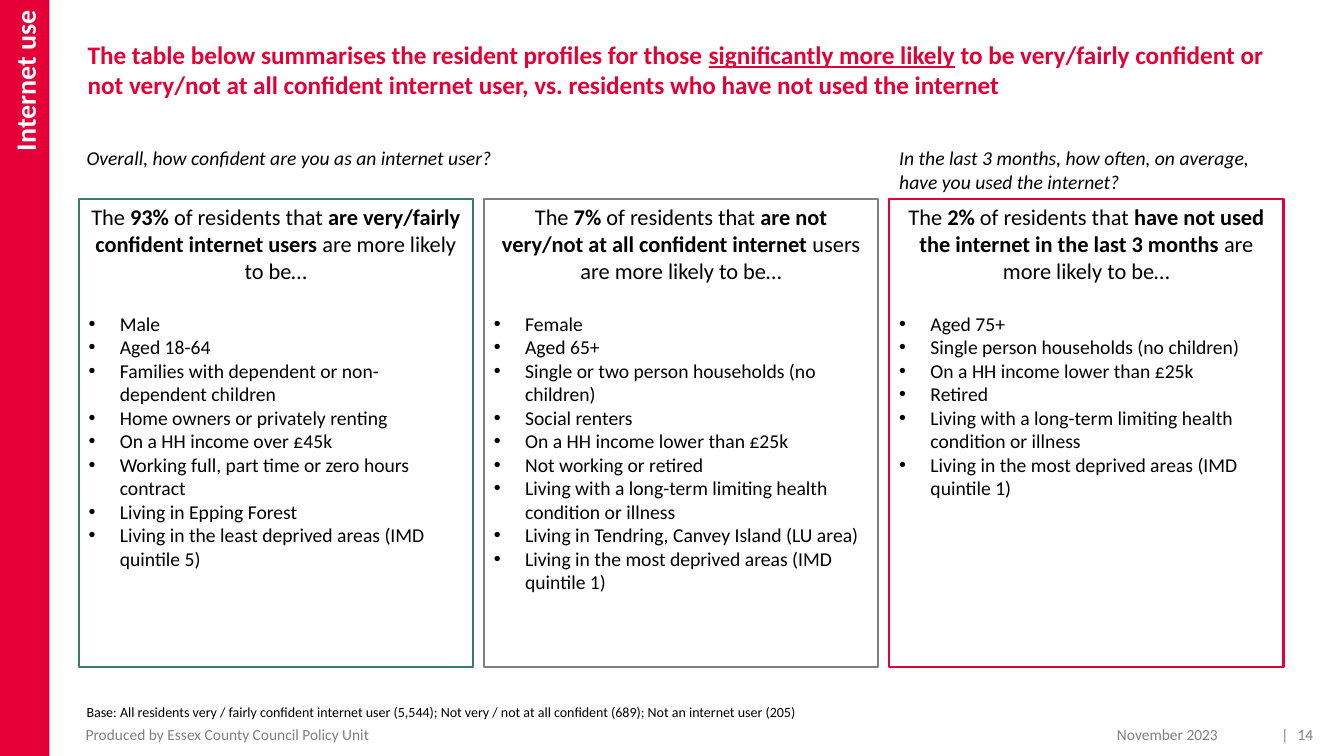
from lxml import etree
from pptx import Presentation
from pptx.dml.color import RGBColor
from pptx.enum.shapes import MSO_SHAPE
from pptx.enum.text import MSO_ANCHOR, PP_ALIGN
from pptx.oxml.ns import qn
from pptx.util import Pt

PX = 9144
RECT = MSO_SHAPE.RECTANGLE
TOP, MID = MSO_ANCHOR.TOP, MSO_ANCHOR.MIDDLE
LEFT, MIDST, RIGHT = PP_ALIGN.LEFT, PP_ALIGN.CENTER, PP_ALIGN.RIGHT
RED, GREEN, GREY = "E40037", "3A7D64", "7F7F7F"
BLACK, WHITE, PALE = "000000", "FFFFFF", "808080"

CARDS = [
    (GREEN, "93% ", "are very/fairly confident internet users ", "are more likely to be…", [
        "Male", "Aged 18-64",
        "Families with dependent or non-dependent children",
        "Home owners or privately renting",
        "On a HH income over £45k",
        "Working full, part time or zero hours contract",
        "Living in Epping Forest",
        "Living in the least deprived areas (IMD quintile 5)"]),
    (GREY, "7% ", "are not very/not at all confident internet ", "users are more likely to be…", [
        "Female", "Aged 65+",
        "Single or two person households (no children)",
        "Social renters",
        "On a HH income lower than £25k",
        "Not working or retired",
        "Living with a long-term limiting health condition or illness",
        "Living in Tendring, Canvey Island (LU area)",
        "Living in the most deprived areas (IMD quintile 1)"]),
    (RED, "2% ", "have not used the internet in the last 3 months ", "are more likely to be…", [
        "Aged 75+",
        "Single person households (no children)",
        "On a HH income lower than £25k",
        "Retired",
        "Living with a long-term limiting health condition or illness",
        "Living in the most deprived areas (IMD quintile 1)"]),
]


def paint(color, hue):
    color.rgb = RGBColor.from_string(hue)


def add_run(para, text, size, hue=BLACK, bold=False, slant=False, under=False):
    run = para.add_run()
    run.text = text
    font = run.font
    font.name, font.size = "Calibri", Pt(size)
    font.bold, font.italic, font.underline = bold, slant, under
    paint(font.color, hue)


def set_frame(shape, pads=(10, 5, 10, 5), anchor=TOP, align=LEFT):
    frame = shape.text_frame
    frame.word_wrap = True
    frame.vertical_anchor = anchor
    (frame.margin_left, frame.margin_top,
     frame.margin_right, frame.margin_bottom) = [pad * PX for pad in pads]
    frame.paragraphs[0].alignment = align
    return frame


def add_text(slide, box, pads=(10, 5, 10, 5), anchor=TOP, align=LEFT):
    shape = slide.shapes.add_textbox(*[v * PX for v in box])
    return set_frame(shape, pads, anchor, align).paragraphs[0]


def add_rect(slide, box):
    shape = slide.shapes.add_shape(RECT, *[v * PX for v in box])
    shape.shadow.inherit = False
    return shape


def add_bullet(para):
    props = para._p.get_or_add_pPr()
    props.set("marL", str(31 * PX))
    props.set("indent", str(-31 * PX))
    etree.SubElement(props, qn("a:buFont")).set("typeface", "Arial")
    etree.SubElement(props, qn("a:buChar")).set("char", "•")


def add_tab(para, pos):
    tabs = etree.SubElement(para._p.get_or_add_pPr(), qn("a:tabLst"))
    tab = etree.SubElement(tabs, qn("a:tab"))
    tab.set("pos", str(pos * PX))
    tab.set("algn", "l")


def add_side(slide, box):
    bar = add_rect(slide, box)
    bar.fill.solid()
    paint(bar.fill.fore_color, RED)
    bar.line.fill.background()
    frame = set_frame(bar, (10, 10, 10, 5), MID, RIGHT)
    frame._txBody.bodyPr.set("vert", "vert270")
    add_run(frame.paragraphs[0], "Internet use", 20, WHITE, bold=True)


def add_title(slide, box):
    para = add_text(slide, box, (10, 5, 10, 0))
    add_run(para, "The table below summarises the resident profiles for those ", 18, RED, bold=True)
    add_run(para, "significantly more likely", 18, RED, bold=True, under=True)
    add_run(para, " to be very/fairly confident or not very/not at all confident internet user, "
            "vs. residents who have not used the internet", 18, RED, bold=True)


def add_asks(slide, box):
    x, y, w, h = box
    add_run(add_text(slide, (x, y, 795, 34)),
            "Overall, how confident are you as an internet user?", 14, slant=True)
    add_run(add_text(slide, (x + w - 391, y, 391, h)),
            "In the last 3 months, how often, on average, have you used the internet?", 14, slant=True)


def add_card(slide, box, hue, share, group, tail, items):
    card = add_rect(slide, box)
    card.fill.background()
    paint(card.line.color, hue)
    card.line.width = Pt(1.5)
    frame = set_frame(card, align=MIDST)
    head = frame.paragraphs[0]
    head.space_after = Pt(19.5)
    for text, bold in [("The ", False), (share, True), ("of residents that ", False),
                       (group, True), (tail, False)]:
        add_run(head, text, 16, bold=bold)
    for item in items:
        para = frame.add_paragraph()
        para.alignment = LEFT
        add_bullet(para)
        add_run(para, item, 14)


def add_cards(slide, box):
    x, y, w, h = box
    gap = 11
    wide = (w - gap * (len(CARDS) - 1)) // len(CARDS)
    for i, card in enumerate(CARDS):
        add_card(slide, (x + i * (wide + gap), y, wide, h), *card)


def add_foot(slide, box):
    x, y, w, h = box
    base = add_text(slide, (x, y, 1141, 27))
    add_run(base, "Base: All residents very / fairly confident internet user (5,544); "
            "Not very / not at all confident (689); Not an internet user (205)", 10)
    low = y + h - 15
    maker = add_text(slide, (x, low, 654, 15), (9, 5, 10, 5), MID)
    add_run(maker, "Produced by Essex County Council Policy Unit", 11, PALE)
    date = add_text(slide, (x + w - 334, low, 240, 15), (10, 5, 0, 5), MID, RIGHT)
    add_run(date, "November 2023", 11, PALE)
    page = add_text(slide, (x + w - 85, low, 100, 15), (54, 5, 0, 5), MID)
    add_tab(page, 16)
    add_run(page, "|\t14", 11, PALE)


def main():
    deck = Presentation()
    deck.slide_width, deck.slide_height = 1333 * PX, 750 * PX
    slide = deck.slides.add_slide(deck.slide_layouts[6])
    add_side(slide, (0, 0, 49, 750))
    add_title(slide, (77, 34, 1225, 118))
    add_asks(slide, (76, 140, 1197, 57))
    add_cards(slide, (78, 197, 1195, 465))
    add_foot(slide, (76, 693, 1226, 43))
    deck.save("out.pptx")


if __name__ == "__main__":
    main()
